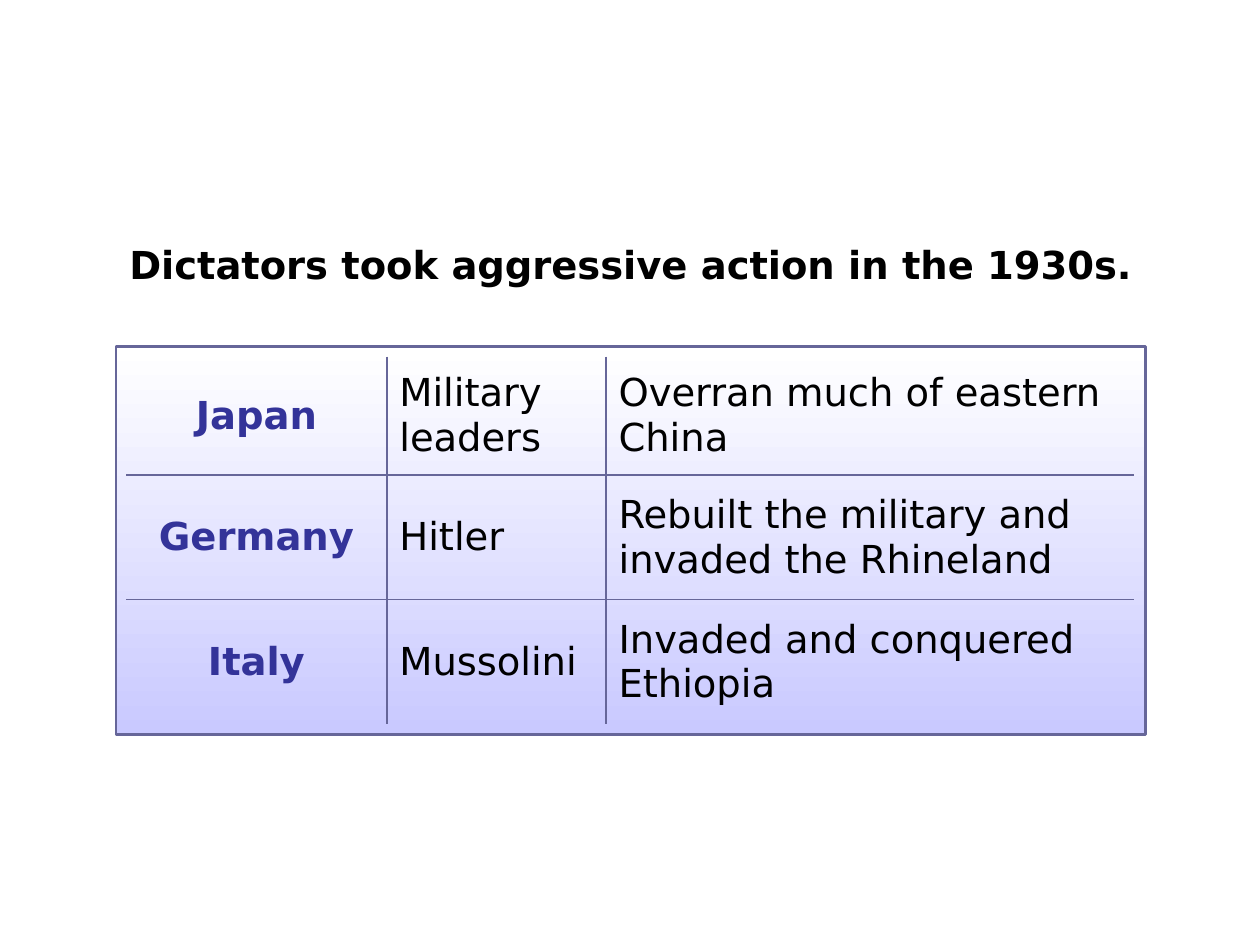
from dataclasses import dataclass

from lxml import etree
from pptx import Presentation
from pptx.dml.color import RGBColor
from pptx.enum import shapes, text
from pptx.oxml import ns
from pptx.util import Inches, Pt

COLORS = {
    "black": "000000",
    "country": "333399",
    "line": "666699",
    "panel_top": "FFFFFF",
    "panel_bottom": "C9C9FF",
}
FONT = "DejaVu Sans"
COLUMN_WIDTHS = (2.07, 1.74, 4.19)
ROW_HEIGHTS = (0.94, 0.99, 0.99)


@dataclass
class Aggressor:
    country: str
    leader: str
    action: str


AGGRESSORS = [
    Aggressor("Japan", "Military leaders", "Overran much of eastern China"),
    Aggressor("Germany", "Hitler", "Rebuilt the military and invaded the Rhineland"),
    Aggressor("Italy", "Mussolini", "Invaded and conquered Ethiopia"),
]


def rgb(name: str) -> RGBColor:
    return RGBColor.from_string(COLORS[name])


def format_paragraph(paragraph, color: str, bold: bool, centred: bool) -> None:
    paragraph.alignment = text.PP_ALIGN.CENTER if centred else text.PP_ALIGN.LEFT
    font = paragraph.runs[0].font
    for name, value in {"name": FONT, "size": Pt(22), "bold": bold}.items():
        setattr(font, name, value)
    font.color.rgb = rgb(color)


def set_space_before(paragraph, percent: int) -> None:
    """Set paragraph spacing as a share of the line height."""
    spacing = etree.Element(ns.qn("a:spcBef"))
    etree.SubElement(spacing, ns.qn("a:spcPct"), val=str(percent * 1000))
    paragraph._p.get_or_add_pPr().insert(0, spacing)


def set_borders(cell, drawn: dict[str, bool]) -> None:
    """Draw the listed sides (in the order L, R, T, B) or clear them."""
    properties = cell._tc.get_or_add_tcPr()
    for index, (side, visible) in enumerate(drawn.items()):
        line = etree.Element(ns.qn(f"a:ln{side}"), w=str(Pt(1)))
        if visible:
            fill = etree.SubElement(line, ns.qn("a:solidFill"))
            etree.SubElement(fill, ns.qn("a:srgbClr"), val=COLORS["line"])
        else:
            etree.SubElement(line, ns.qn("a:noFill"))
        properties.insert(index, line)


def add_title(slide, wording: str) -> None:
    title = slide.shapes.title
    box = {"left": 0.92, "top": 1.86, "width": 8.17, "height": 0.83}
    for name, value in box.items():
        setattr(title, name, Inches(value))
    frame = title.text_frame
    frame.text = wording
    frame.vertical_anchor = text.MSO_ANCHOR.TOP
    frame.auto_size = text.MSO_AUTO_SIZE.SHAPE_TO_FIT_TEXT
    format_paragraph(frame.paragraphs[0], "black", bold=True, centred=True)


def add_panel(slide) -> None:
    panel = slide.shapes.add_shape(
        shapes.MSO_SHAPE.RECTANGLE,
        Inches(0.92), Inches(2.75), Inches(8.17), Inches(3.08))
    panel.shadow.inherit = False
    panel.fill.gradient()
    panel.fill.gradient_angle = 270
    for stop, color in zip(panel.fill.gradient_stops, ("panel_top", "panel_bottom")):
        stop.color.rgb = rgb(color)
    panel.line.color.rgb = rgb("line")
    panel.line.width = Pt(1.5)


def add_aggressor_table(slide, aggressors: list[Aggressor]) -> None:
    last_row, last_column = len(aggressors) - 1, len(COLUMN_WIDTHS) - 1
    table = slide.shapes.add_table(
        len(aggressors), len(COLUMN_WIDTHS), Inches(1), Inches(2.83),
        Inches(sum(COLUMN_WIDTHS)), Inches(sum(ROW_HEIGHTS))).table
    table.first_row = table.horz_banding = False
    for column, width in zip(table.columns, COLUMN_WIDTHS):
        column.width = Inches(width)
    for row, height in zip(table.rows, ROW_HEIGHTS):
        row.height = Inches(height)

    for row, aggressor in enumerate(aggressors):
        wordings = (aggressor.country, aggressor.leader, aggressor.action)
        for column, wording in enumerate(wordings):
            cell = table.cell(row, column)
            cell.text = wording
            cell.vertical_anchor = text.MSO_ANCHOR.MIDDLE
            cell.fill.background()
            is_country = column == 0
            paragraph = cell.text_frame.paragraphs[0]
            format_paragraph(paragraph, "country" if is_country else "black",
                             bold=is_country, centred=is_country)
            set_space_before(paragraph, 20)
            set_borders(cell, {"L": column > 0, "R": column < last_column,
                               "T": row > 0, "B": row < last_row})


def main() -> None:
    presentation = Presentation()
    presentation.slide_width = Inches(10)
    presentation.slide_height = Inches(7.5)
    title_only = presentation.slide_layouts.get_by_name("Title Only")
    slide = presentation.slides.add_slide(title_only)
    add_panel(slide)
    add_title(slide, "Dictators took aggressive action in the 1930s.")
    add_aggressor_table(slide, AGGRESSORS)
    presentation.save("out.pptx")


if __name__ == "__main__":
    main()
